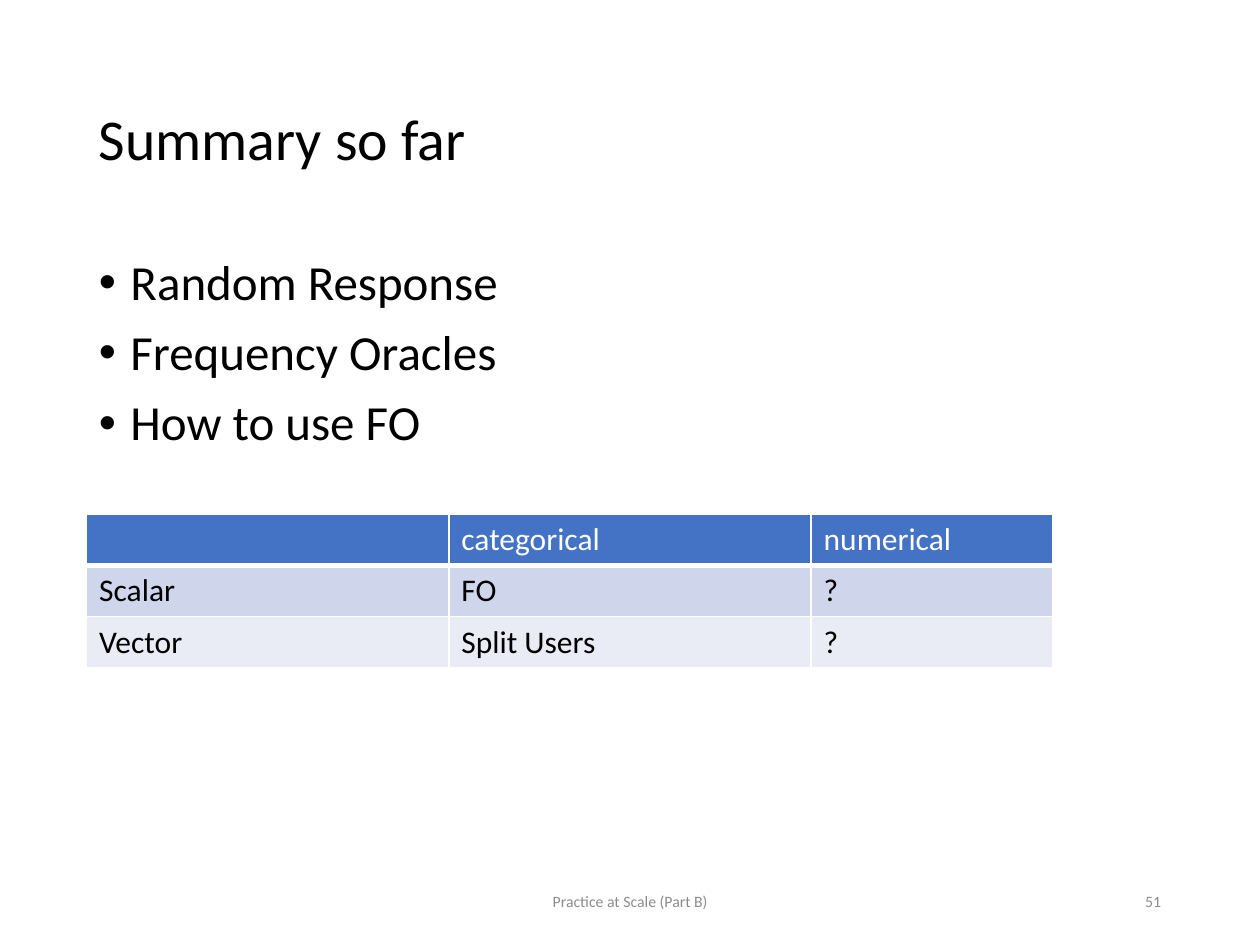
from lxml.etree import SubElement
from pptx import Presentation
from pptx.dml.color import RGBColor
from pptx.enum.text import MSO_ANCHOR as Anchor, PP_ALIGN as Align
from pptx.oxml.ns import qn
from pptx.util import Pt

FONT = "Calibri"
ROW_FILLS = ["4472C4", "CFD5EA", "E9EBF5"]


def color(value):
    """Turn a hex string into a colour."""
    return RGBColor.from_string(value)


def style(para, size, value):
    """Set the font of a whole paragraph."""
    font = para.font
    font.name, font.size, font.bold = FONT, Pt(size), False
    font.color.rgb = color(value)


def add_text(page, box, lines, size, value="000000", align=Align.LEFT,
             anchor=Anchor.MIDDLE, spacing=None, bullets=False):
    """Place a text box with one paragraph per line."""
    frame = page.shapes.add_textbox(*map(Pt, box)).text_frame
    frame.word_wrap = True
    frame.vertical_anchor = anchor
    for index, line in enumerate(lines):
        para = frame.add_paragraph() if index else frame.paragraphs[0]
        para.text = line
        para.alignment = align
        para.line_spacing = spacing
        if index:
            para.space_before = Pt(10)
        if bullets:
            add_bullet(para)
        style(para, size, value)


def add_bullet(para):
    """Give a paragraph a round bullet with a hanging indent."""
    props = para._p.get_or_add_pPr()
    props.set("marL", str(Pt(18)))
    props.set("indent", str(-Pt(18)))
    SubElement(props, qn("a:buFont"), typeface="Arial")
    SubElement(props, qn("a:buChar"), char="•")


def add_borders(cell, bottom):
    """Draw white lines around a cell, with its own bottom width."""
    props = cell._tc.get_or_add_tcPr()
    widths = {"a:lnL": 1, "a:lnR": 1, "a:lnT": 1, "a:lnB": bottom}
    for place, (tag, width) in enumerate(widths.items()):
        line = SubElement(props, qn(tag), w=str(Pt(width)))
        fill = SubElement(line, qn("a:solidFill"))
        SubElement(fill, qn("a:srgbClr"), val="FFFFFF")
        props.insert(place, line)


def add_grid(page, box, rows):
    """Place a table with equal columns, a header row and shaded rows."""
    left, top, width, height = box
    table = page.shapes.add_table(len(rows), len(rows[0]), *map(Pt, box)).table
    for column in table.columns:
        column.width = Pt(width / len(rows[0]))
    for index, texts in enumerate(rows):
        table.rows[index].height = Pt(height / len(rows))
        for cell, text in zip(table.rows[index].cells, texts):
            cell.text = text
            cell.fill.solid()
            cell.fill.fore_color.rgb = color(ROW_FILLS[index])
            add_borders(cell, 1 if index else 3)
            style(cell.text_frame.paragraphs[0], 18, "000000" if index else "FFFFFF")


def add_tables(page, box):
    """Place the two tables side by side, three columns wide in all."""
    left, top, width, height = box
    split = width * 0.75
    add_grid(page, (left, top, split, height),
             [["", "categorical"], ["Scalar", "FO"], ["Vector", "Split Users"]])
    add_grid(page, (left + split, top, width - split, height),
             [["numerical"], ["?"], ["?"]])


def add_footer(page, box):
    """Place the centred footer and the page number at the right."""
    left, top, width, height = box
    middle, number = 243, 162
    add_text(page, (left + (width - middle) / 2, top, middle, height),
             ["Practice at Scale (Part B)"], 9, "8C8C8C", Align.CENTER)
    add_text(page, (left + width - number, top, number, height),
             ["51"], 9, "8C8C8C", Align.RIGHT)


def main():
    """Build the summary slide."""
    deck = Presentation()
    deck.slide_width, deck.slide_height = Pt(720), Pt(540)
    page = deck.slides.add_slide(deck.slide_layouts[6])
    left, width = 49.5, 621
    add_text(page, (left, 28.75, width, 104.4), ["Summary so far"], 33, spacing=0.9)
    add_text(page, (left, 143.75, width, 342.6),
             ["Random Response", "Frequency Oracles", "How to use FO"], 28,
             anchor=Anchor.TOP, spacing=0.9, bullets=True)
    add_tables(page, (left, 294, 552, 87.6))
    add_footer(page, (left, 500.5, width, 28.75))
    deck.save("out.pptx")


if __name__ == "__main__":
    main()
